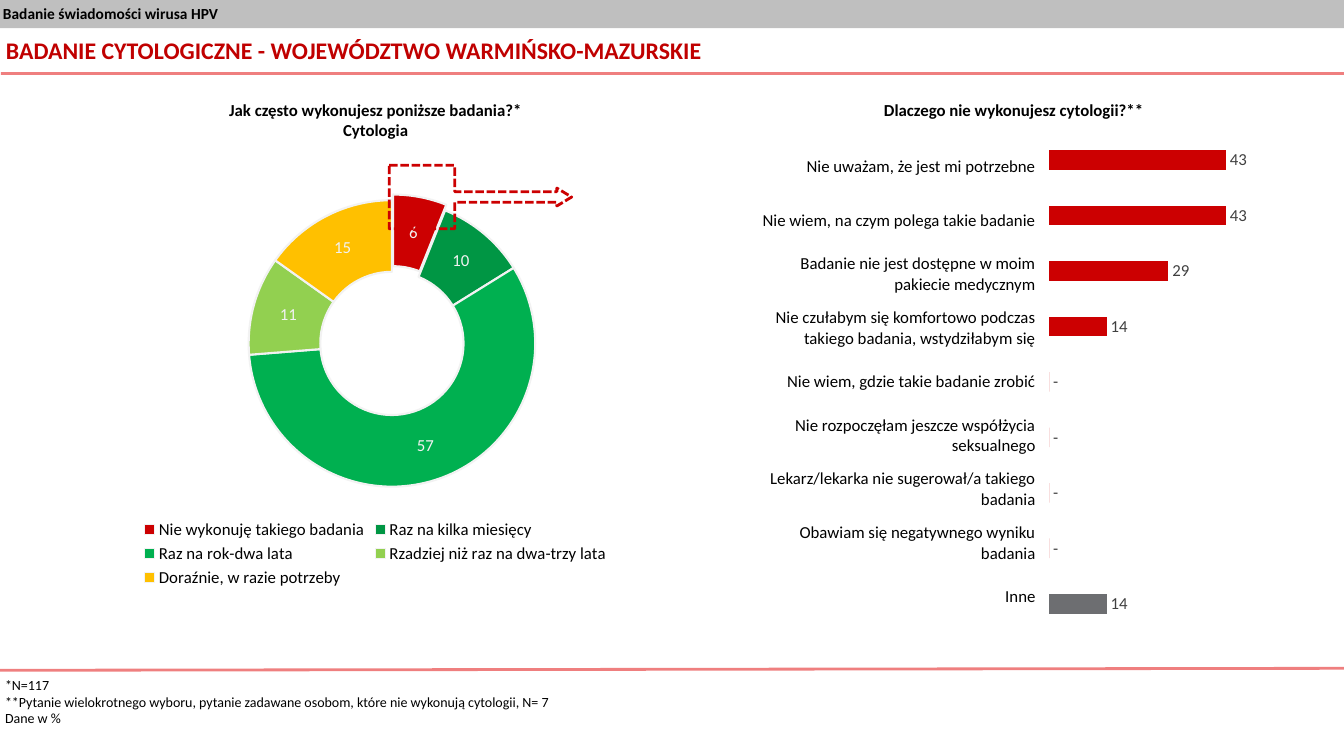
from lxml import etree
from pptx import Presentation
from pptx.chart.data import CategoryChartData
from pptx.dml.color import RGBColor
from pptx.enum.chart import XL_CHART_TYPE, XL_LABEL_POSITION, XL_LEGEND_POSITION
from pptx.enum.dml import MSO_LINE
from pptx.enum.shapes import MSO_CONNECTOR, MSO_SHAPE
from pptx.enum.text import MSO_ANCHOR, PP_ALIGN
from pptx.oxml import parse_xml
from pptx.oxml.ns import nsdecls, qn
from pptx.util import Inches, Pt

BLACK = RGBColor(0x00, 0x00, 0x00)
GRAY = RGBColor(0x80, 0x80, 0x80)
LABEL_GRAY = RGBColor(0x40, 0x40, 0x40)
PALE = RGBColor(0xF2, 0xF2, 0xF2)
OTHER_GRAY = RGBColor(0x6D, 0x6E, 0x71)
RULE_RED = RGBColor(0xE0, 0x00, 0x00)
TITLE_RED = RGBColor(0xC0, 0x00, 0x00)
RED = RGBColor(0xCC, 0x00, 0x01)
DARK_GREEN = RGBColor(0x00, 0x96, 0x44)
GREEN = RGBColor(0x00, 0xB0, 0x50)
LIME = RGBColor(0x92, 0xD0, 0x50)
AMBER = RGBColor(0xFF, 0xC0, 0x00)

FONT = "Calibri"
LEFT, CENTER, RIGHT = PP_ALIGN.LEFT, PP_ALIGN.CENTER, PP_ALIGN.RIGHT
TOP, MIDDLE = MSO_ANCHOR.TOP, MSO_ANCHOR.MIDDLE


def write(frame, lines, size, bold=False, color=BLACK, align=LEFT, anchor=TOP):
    frame.word_wrap = True
    frame.vertical_anchor = anchor
    frame.text = "\n".join(lines)
    frame.margin_left = frame.margin_right = Inches(0.05)
    frame.margin_top = frame.margin_bottom = Inches(0.05)
    for para in frame.paragraphs:
        para.alignment = align
        for span in para.runs:
            span.font.name, span.font.size = FONT, Pt(size)
            span.font.bold, span.font.color.rgb = bold, color


def manual_layout(x, y, width, height, inner=False):
    target = '<c:layoutTarget val="inner"/>' if inner else ""
    return parse_xml(
        f'<c:layout {nsdecls("c")}><c:manualLayout>{target}'
        '<c:xMode val="edge"/><c:yMode val="edge"/>'
        f'<c:x val="{x}"/><c:y val="{y}"/><c:w val="{width}"/><c:h val="{height}"/>'
        '</c:manualLayout></c:layout>')


deck = Presentation()
deck.slide_width, deck.slide_height = Inches(13.33), Inches(7.5)
page = deck.slides.add_slide(deck.slide_layouts[6])
shapes = page.shapes

# Header band
band = shapes.add_shape(MSO_SHAPE.RECTANGLE, Inches(-0.02), Inches(-0.01),
                        Inches(13.36), Inches(0.29))
band.shadow.inherit = False
band.fill.solid()
band.fill.fore_color.rgb = GRAY
band.line.fill.background()
write(band.text_frame, ["Badanie świadomości wirusa HPV"], 11, True, anchor=MIDDLE)
translucent = [band.fill._xPr.find(".//" + qn("a:srgbClr"))]

# Rules under the title and above the footnotes
for x1, y1, x2, y2 in [(13.4, 0.73, 0.01, 0.73), (13.39, 6.63, -0.13, 6.65)]:
    rule = shapes.add_connector(MSO_CONNECTOR.STRAIGHT, Inches(x1), Inches(y1),
                                Inches(x2), Inches(y2))
    rule.line.color.rgb = RULE_RED
    rule.line.width = Pt(2)
    properties = rule._element.spPr
    etree.SubElement(properties, qn("a:effectLst"))
    translucent.append(properties.find(".//" + qn("a:srgbClr")))
for color in translucent:
    etree.SubElement(color, qn("a:alpha")).set("val", "50000")

# Title, chart headings and footnotes
texts = [
    (0.01, 0.28, 13.33, 0.44, ["BADANIE CYTOLOGICZNE - WOJEWÓDZTWO WARMIŃSKO-MAZURSKIE"],
     17, True, TITLE_RED, LEFT, MIDDLE),
    (1.38, 0.94, 4.69, 0.5, ["Jak często wykonujesz poniższe badania?*", "Cytologia"],
     12, True, BLACK, CENTER, TOP),
    (7.71, 0.94, 4.69, 0.3, ["Dlaczego nie wykonujesz cytologii?**"],
     12, True, BLACK, CENTER, TOP),
    (0, 6.66, 7.99, 0.61,
     ["*N=117",
      "**Pytanie wielokrotnego wyboru, pytanie zadawane osobom, "
      "które nie wykonują cytologii, N= 7",
      "Dane w %"], 10, False, BLACK, LEFT, TOP),
]
for left, top, width, height, *content in texts:
    box = shapes.add_textbox(Inches(left), Inches(top), Inches(width), Inches(height))
    write(box.text_frame, *content)

# Frequency doughnut
frequencies = [
    ("Nie wykonuję takiego badania", 6, RED),
    ("Raz na kilka miesięcy", 10, DARK_GREEN),
    ("Raz na rok-dwa lata", 57, GREEN),
    ("Rzadziej niż raz na dwa-trzy lata", 11, LIME),
    ("Doraźnie, w razie potrzeby", 15, AMBER),
]
frequency_data = CategoryChartData()
frequency_data.categories = [name for name, _, _ in frequencies]
frequency_data.add_series("Series 1", [value for _, value, _ in frequencies])
doughnut = shapes.add_chart(XL_CHART_TYPE.DOUGHNUT, Inches(0.77), Inches(1.78),
                            Inches(5.91), Inches(4.09), frequency_data).chart
doughnut.has_legend = True
doughnut.legend.position = XL_LEGEND_POSITION.BOTTOM
doughnut.legend.include_in_layout = False
doughnut.legend._element.find(qn("c:legendPos")).addnext(
    manual_layout(0.1, 0.82, 0.81, 0.18))
slices = doughnut.plots[0].series[0]
for index, (_, _, color) in enumerate(frequencies):
    part = slices.points[index].format
    part.fill.solid()
    part.fill.fore_color.rgb = color
    part.line.color.rgb = PALE
    part.line.width = Pt(1.5)
first_slice = slices._element.find(qn("c:dPt"))
explosion = parse_xml(f'<c:explosion {nsdecls("c")} val="8"/>')
first_slice.find(qn("c:spPr")).addprevious(explosion)
doughnut._chartSpace.find(".//" + qn("c:holeSize")).set("val", "75")

# Arrow from the exploded slice to the reasons
callout = shapes.add_shape(MSO_SHAPE.RIGHT_ARROW_CALLOUT, Inches(3.86), Inches(1.64),
                           Inches(1.81), Inches(0.63))
callout.shadow.inherit = False
callout.fill.background()
callout.line.color.rgb = RED
callout.line.width = Pt(2)
callout.line.dash_style = MSO_LINE.SQUARE_DOT
for index, value in enumerate([0.167, 0.141, 0.233, 0.359]):
    callout.adjustments[index] = value

# Reasons bar chart
reasons = [
    ("Nie uważam, że jest mi potrzebne", 43),
    ("Nie wiem, na czym polega takie badanie", 43),
    ("Badanie nie jest dostępne w moim pakiecie medycznym", 29),
    ("Nie czułabym się komfortowo podczas takiego badania, wstydziłabym się", 14),
    ("Nie wiem, gdzie takie badanie zrobić", 0),
    ("Nie rozpoczęłam jeszcze współżycia seksualnego", 0),
    ("Lekarz/lekarka nie sugerował/a takiego badania", 0),
    ("Obawiam się negatywnego wyniku badania", 0),
    ("Inne", 14),
]
reason_data = CategoryChartData()
reason_data.categories = [str(number + 1) for number in range(len(reasons))]
reason_data.add_series("Series 1", [value for _, value in reasons])
bars = shapes.add_chart(XL_CHART_TYPE.BAR_CLUSTERED, Inches(10.32), Inches(1.21),
                        Inches(4.25), Inches(5.16), reason_data).chart
bars.has_legend = False
bars.category_axis.reverse_order = True
bars.value_axis.minimum_scale, bars.value_axis.maximum_scale = 0, 100
bars.value_axis.has_major_gridlines = False
bars.category_axis.visible = bars.value_axis.visible = False
bars.plots[0].gap_width = 182
bars.plots[0].vary_by_categories = False
reason_bars = bars.plots[0].series[0]
for part, color in [(reason_bars, RED), (reason_bars.points[8], OTHER_GRAY)]:
    part.format.fill.solid()
    part.format.fill.fore_color.rgb = color

# Shared chart settings
for chart, color, number_format, layout in [
        (doughnut, PALE, "###0", (0.287, 0.049, 0.481, 0.698)),
        (bars, LABEL_GRAY, '###0;-###0;"-"', (0.02, 0.02, 0.96, 0.96))]:
    chart.has_title = False
    chart.font.name, chart.font.size = FONT, Pt(12)
    chart.font.color.rgb = BLACK
    labels = chart.plots[0].series[0].data_labels
    labels.show_value = True
    labels.number_format, labels.number_format_is_linked = number_format, False
    labels.font.name, labels.font.size = FONT, Pt(12)
    labels.font.color.rgb = color
    plot_area = chart._chartSpace.find(".//" + qn("c:plotArea"))
    for old_layout in plot_area.findall(qn("c:layout")):
        plot_area.remove(old_layout)
    plot_area.insert(0, manual_layout(*layout, inner=True))
reason_bars.data_labels.position = XL_LABEL_POSITION.OUTSIDE_END

# Reason names beside the bars
table = shapes.add_table(len(reasons), 1, Inches(7.33), Inches(1.39),
                         Inches(3.04), Inches(4.8)).table
table.first_row = table.horz_banding = False
for row, (reason, _) in enumerate(reasons):
    cell = table.cell(row, 0)
    cell.fill.background()
    write(cell.text_frame, [reason], 12, align=RIGHT)
    cell.vertical_anchor = MIDDLE
    cell.margin_left = cell.margin_right = Inches(0.1)
    cell.margin_top = cell.margin_bottom = Inches(0.05)

deck.save("out.pptx")
